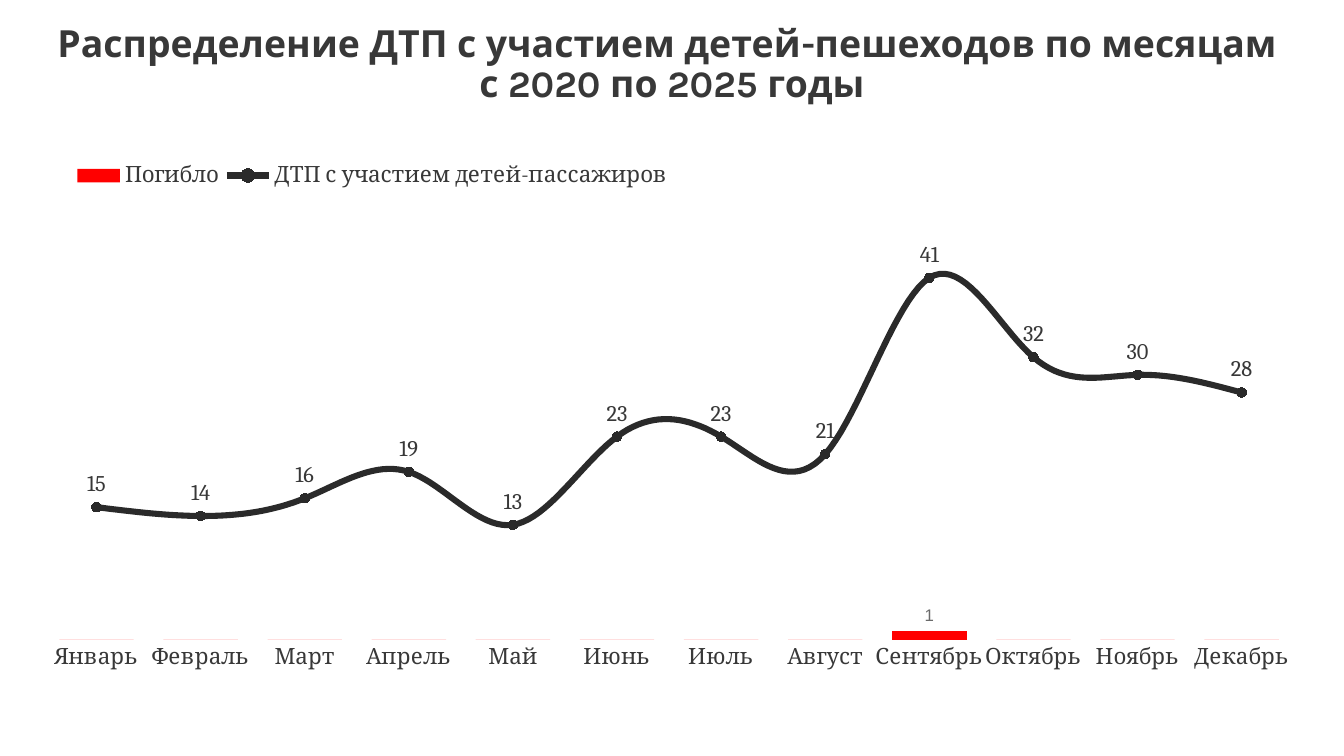
from lxml import etree
from pptx import Presentation
from pptx import util as u
from pptx.chart import data as chart_data
from pptx.dml.color import RGBColor
from pptx.enum import chart as ch, text
from pptx.oxml import ns

TITLE = "Распределение ДТП с участием детей-пешеходов по месяцам \vс 2020 по 2025 годы"
MONTHS = ["Январь", "Февраль", "Март", "Апрель", "Май", "Июнь", "Июль",
          "Август", "Сентябрь", "Октябрь", "Ноябрь", "Декабрь"]
DEATHS = ("Погибло", [0, 0, 0, 0, 0, 0, 0, 0, 1, 0, 0, 0])
ACCIDENTS = ("ДТП с участием детей-пассажиров",
             [15, 14, 16, 19, 13, 23, 23, 21, 41, 32, 30, 28])

THEME = {
    "title": {"name": "Karla", "size": u.Pt(20), "bold": True, "color": "383838"},
    "base": {"name": "Arial", "size": u.Pt(10), "color": "383838"},
    "label": {"name": "Cambria", "size": u.Pt(12), "color": "383838"},
    "deaths_label": {"name": "Arial", "size": u.Pt(9), "color": "6A6A6A"},
    "deaths": "FF0000",
    "accidents": "2A2A2A",
}

SLIDE_SIZE = u.Cm(25.4), u.Cm(14.29)
TITLE_BOX = u.Cm(0), u.Cm(0.23), u.Cm(25.4), u.Cm(1.47)
CHART_BOX = u.Cm(0.84), u.Cm(2.79), u.Cm(23.85), u.Cm(10.57)
PLOT_AREA = {"x": 0, "y": 0.17, "w": 0.99, "h": 0.71}
LEGEND_AREA = {"x": 0.02, "y": 0.02, "w": 0.48, "h": 0.06}


def assign(target, formats):
    for key, value in formats.items():
        setattr(target, key, value)


def style_font(font, style):
    assign(font, {key: value for key, value in style.items() if key != "color"})
    font.color.rgb = RGBColor.from_string(style["color"])


def paint(fill, color):
    fill.solid()
    fill.fore_color.rgb = RGBColor.from_string(color)


def add_value(parent, tag, value):
    etree.SubElement(parent, ns.qn(f"c:{tag}")).set("val", str(value))


def manual_layout(area, target=None):
    layout = etree.Element(ns.qn("c:layout"))
    manual = etree.SubElement(layout, ns.qn("c:manualLayout"))
    if target:
        add_value(manual, "layoutTarget", target)
    for side in "xy":
        add_value(manual, f"{side}Mode", "edge")
    for side, share in area.items():
        add_value(manual, side, share)
    return layout


def move_to_line(columns, series):
    bars = columns._element
    line = bars.makeelement(ns.qn("c:lineChart"))
    add_value(line, "grouping", "stacked")
    add_value(line, "varyColors", 0)
    outline = series._element
    for flag in outline.findall(ns.qn("c:invertIfNegative")):
        outline.remove(flag)
    line.append(outline)
    add_value(line, "marker", 1)
    for axis in bars.findall(ns.qn("c:axId")):
        add_value(line, "axId", axis.get("val"))
    bars.addnext(line)


def label_series(series, position, style, number_format):
    labels = series.data_labels
    assign(labels, {"show_value": True, "position": position,
                    "number_format": number_format,
                    "number_format_is_linked": False})
    style_font(labels.font, style)


def add_title(slide):
    frame = slide.shapes.add_textbox(*TITLE_BOX).text_frame
    margins = {f"margin_{side}": u.Cm(0.25) for side in ("left", "top", "right", "bottom")}
    assign(frame, {"word_wrap": True, "vertical_anchor": text.MSO_ANCHOR.TOP,
                   "text": TITLE, **margins})
    heading = frame.paragraphs[0]
    assign(heading, {"alignment": text.PP_ALIGN.CENTER, "line_spacing": 0.9})
    for run in heading.runs:
        style_font(run.font, THEME["title"])


def add_monthly_chart(slide):
    data = chart_data.CategoryChartData()
    data.categories = MONTHS
    for name, values in (DEATHS, ACCIDENTS):
        data.add_series(name, values)
    chart = slide.shapes.add_chart(
        ch.XL_CHART_TYPE.COLUMN_CLUSTERED, *CHART_BOX, data).chart
    assign(chart, {"has_title": False, "has_legend": True})
    style_font(chart.font, THEME["base"])

    columns = chart.plots[0]
    move_to_line(columns, columns.series[1])
    columns, trend = chart.plots
    assign(columns, {"gap_width": 40, "vary_by_categories": False})

    deaths, accidents = columns.series[0], trend.series[0]
    paint(deaths.format.fill, THEME["deaths"])
    label_series(deaths, ch.XL_LABEL_POSITION.OUTSIDE_END, THEME["deaths_label"], "0;;;")

    accidents.smooth = True
    accidents.format.line.width = u.Pt(3.25)
    assign(accidents.marker, {"style": ch.XL_MARKER_STYLE.CIRCLE, "size": 5})
    for fill in (accidents.format.line.fill, accidents.marker.format.fill,
                 accidents.marker.format.line.fill):
        paint(fill, THEME["accidents"])
    label_series(accidents, ch.XL_LABEL_POSITION.ABOVE, THEME["label"], "0")

    months = chart.category_axis
    assign(months, {"major_tick_mark": ch.XL_TICK_MARK.NONE, "has_major_gridlines": False})
    months.format.line.fill.background()
    style_font(months.tick_labels.font, THEME["label"])
    assign(chart.value_axis, {"visible": False, "has_major_gridlines": False,
                              "minimum_scale": 0, "maximum_scale": 45})

    legend = chart.legend
    assign(legend, {"position": ch.XL_LEGEND_POSITION.BOTTOM, "include_in_layout": False})
    style_font(legend.font, THEME["label"])
    for old in legend._element.findall(ns.qn("c:layout")):
        legend._element.remove(old)
    legend._element.find(ns.qn("c:legendPos")).addnext(manual_layout(LEGEND_AREA))

    plot_area = columns._element.getparent()
    for old in plot_area.findall(ns.qn("c:layout")):
        plot_area.remove(old)
    plot_area.insert(0, manual_layout(PLOT_AREA, "inner"))


def main():
    deck = Presentation()
    assign(deck, dict(zip(("slide_width", "slide_height"), SLIDE_SIZE)))
    slide = deck.slides.add_slide(deck.slide_layouts[6])
    add_monthly_chart(slide)
    add_title(slide)
    deck.save("out.pptx")


if __name__ == "__main__":
    main()
